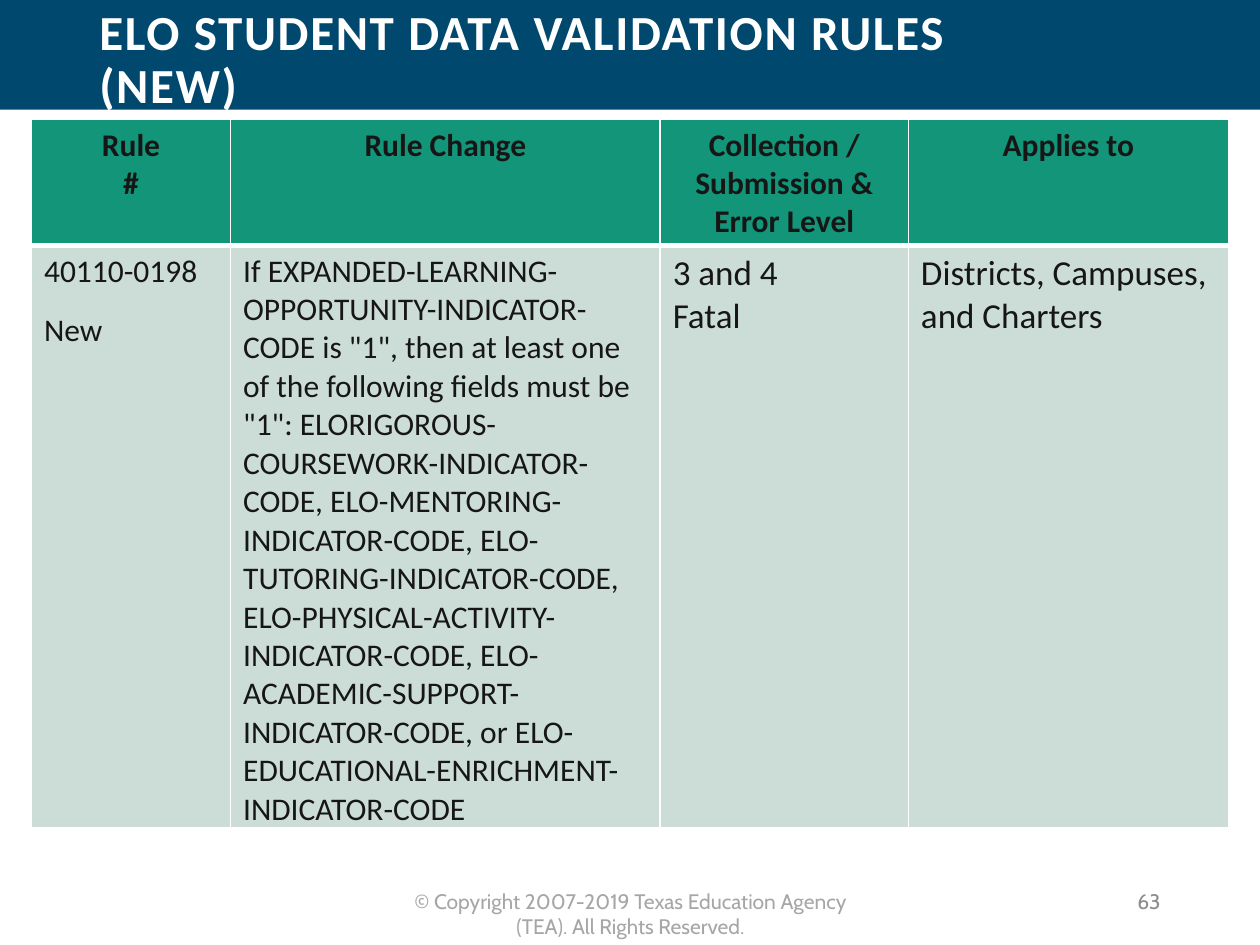
from lxml.etree import SubElement
from pptx import Presentation
from pptx.dml.color import RGBColor
from pptx.enum.shapes import MSO_SHAPE
from pptx.enum.text import MSO_ANCHOR, MSO_AUTO_SIZE, PP_ALIGN
from pptx.oxml.ns import qn
from pptx.util import Inches, Pt

NAVY = RGBColor(0x00, 0x48, 0x6E)
GREEN = RGBColor(0x12, 0x95, 0x79)
PALE_GREEN = RGBColor(0xCC, 0xDD, 0xD7)
INK = RGBColor(0x17, 0x16, 0x16)
WHITE = RGBColor(0xFF, 0xFF, 0xFF)
FOOTER_GREY = RGBColor(0xA6, 0xA6, 0xA6)
NUMBER_GREY = RGBColor(0x8C, 0x8C, 0x8C)

HEADINGS = ["Rule\n#", "Rule Change", "Collection / Submission & Error Level", "Applies to"]
RULE = (
    'If EXPANDED-LEARNING-OPPORTUNITY-INDICATOR-CODE is "1", then at least one of the '
    'following fields must be "1": ELORIGOROUS-COURSEWORK-INDICATOR-CODE, '
    "ELO-MENTORING-INDICATOR-CODE, ELO-TUTORING-INDICATOR-CODE, "
    "ELO-PHYSICAL-ACTIVITY-INDICATOR-CODE, ELO-ACADEMIC-SUPPORT-INDICATOR-CODE, "
    "or ELO-EDUCATIONAL-ENRICHMENT-INDICATOR-CODE"
)
ENTRIES = [
    ("40110-0198\nNew", 18, 6),
    (RULE, 18, 6),
    ("3 and 4\nFatal", 20, 0),
    ("Districts, Campuses, and Charters", 20, 0),
]
COLUMN_WIDTHS = [1.58, 3.41, 1.97, 2.54]
ROW_HEIGHTS = [0.98, 4.62]


class SlideBuilder:
    """Holds the text fonts and the current page, and adds each kind of element."""

    def __init__(self, page, body_font, footer_font):
        self.page = page
        self.body_font = body_font
        self.footer_font = footer_font

    def set_text(self, frame, text, font, size, color, bold=False, align=PP_ALIGN.LEFT, gap=0):
        frame.text = text
        for index, para in enumerate(frame.paragraphs):
            para.alignment = align
            para.space_before = Pt(gap if index else 0)
            para.space_after = Pt(gap)
            for span in para.runs:
                span.font.name = font
                span.font.size = Pt(size)
                span.font.bold = bold
                span.font.color.rgb = color

    def band(self, left, top, width, height, color):
        shape = self.page.shapes.add_shape(
            MSO_SHAPE.RECTANGLE, Inches(left), Inches(top), Inches(width), Inches(height))
        shape.shadow.inherit = False
        shape.fill.solid()
        shape.fill.fore_color.rgb = color
        shape.line.fill.background()

    def text_box(self, left, top, width, height, anchor):
        box = self.page.shapes.add_textbox(
            Inches(left), Inches(top), Inches(width), Inches(height))
        frame = box.text_frame
        frame.word_wrap = True
        frame.vertical_anchor = anchor
        return frame

    def title(self, text, left, top, width, height):
        frame = self.text_box(left, top, width, height, MSO_ANCHOR.MIDDLE)
        self.set_text(frame, text, self.body_font, 28, WHITE, bold=True)
        para = frame.paragraphs[0]
        para.line_spacing = 0.9
        para.runs[0]._r.get_or_add_rPr().set("spc", "100")

    def footer(self, text, left, top, width, height, color, align, anchor=MSO_ANCHOR.TOP):
        frame = self.text_box(left, top, width, height, anchor)
        if anchor == MSO_ANCHOR.TOP:
            frame.auto_size = MSO_AUTO_SIZE.SHAPE_TO_FIT_TEXT
        self.set_text(frame, text, self.footer_font, 12, color, align=align)

    def style_cell(self, cell, fill, top_width, bottom_width):
        properties = cell._tc.get_or_add_tcPr()
        for side, width in zip("LRTB", (1, 1, top_width, bottom_width)):
            line = SubElement(properties, qn(f"a:ln{side}"), w=str(int(Pt(width))))
            paint = SubElement(line, qn("a:solidFill"))
            SubElement(paint, qn("a:srgbClr"), val=str(WHITE))
        cell.fill.solid()
        cell.fill.fore_color.rgb = fill

    def rules_table(self, left, top):
        table = self.page.shapes.add_table(
            len(ROW_HEIGHTS), len(COLUMN_WIDTHS), Inches(left), Inches(top),
            Inches(sum(COLUMN_WIDTHS)), Inches(sum(ROW_HEIGHTS))).table
        for row, height in zip(table.rows, ROW_HEIGHTS):
            row.height = Inches(height)
        for index, width in enumerate(COLUMN_WIDTHS):
            table.columns[index].width = Inches(width)
            header, entry = table.cell(0, index), table.cell(1, index)
            self.style_cell(header, GREEN, 1, 3)
            self.set_text(header.text_frame, HEADINGS[index], self.body_font, 18, INK,
                          bold=True, align=PP_ALIGN.CENTER)
            text, size, gap = ENTRIES[index]
            self.style_cell(entry, PALE_GREEN, 3, 1)
            self.set_text(entry.text_frame, text, self.body_font, size, INK, gap=gap)


def main():
    deck = Presentation()
    deck.slide_width, deck.slide_height = Inches(10), Inches(7.5)
    page = deck.slides.add_slide(deck.slide_layouts[6])
    builder = SlideBuilder(page, "Calibri", "Cabin")
    builder.band(0, 0, 10, 0.87, NAVY)
    builder.footer("© Copyright 2007-2019 Texas Education Agency (TEA). All Rights Reserved.",
                   3.04, 7, 3.93, 0.3, FOOTER_GREY, PP_ALIGN.CENTER)
    builder.title("ELO STUDENT DATA VALIDATION RULES (NEW)", 0.69, 0.05, 8, 0.87)
    builder.rules_table(0.25, 0.95)
    builder.footer("63", 7.06, 6.95, 2.25, 0.4, NUMBER_GREY, PP_ALIGN.RIGHT, MSO_ANCHOR.MIDDLE)
    deck.save("out.pptx")


if __name__ == "__main__":
    main()
